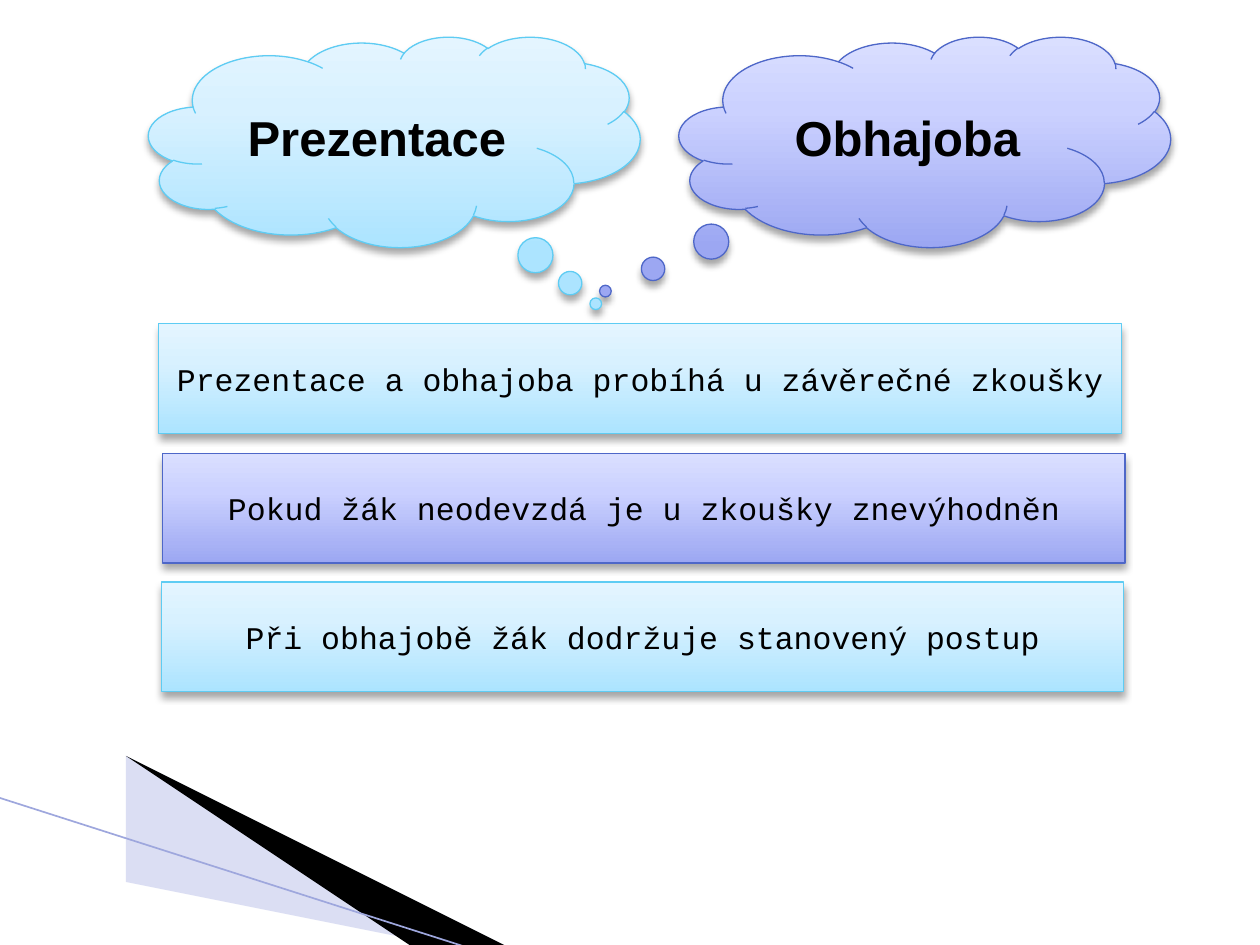
from lxml.etree import SubElement
from pptx import Presentation
from pptx.dml.color import RGBColor
from pptx.enum.shapes import MSO_CONNECTOR, MSO_SHAPE
from pptx.enum.text import MSO_ANCHOR, PP_ALIGN
from pptx.oxml import parse_xml
from pptx.oxml.ns import nsdecls, qn
from pptx.util import Inches, Pt

COLORS = {
    "black": "000000",
    "sky line": "5ECCF3",
    "violet line": "4E67C8",
    "text outline": "B4DCFA",
    "pale wedge": "A6AEE1",
    "edge": "9EA7DD",
}
GRADIENTS = {
    "sky": [(0, "ACE4FF"), (65, "D8F1FF"), (100, "E4F5FF")],
    "violet": [(0, "9CA7F2"), (65, "CBD1FF"), (100, "DADFFF")],
}


def rgb(name):
    return RGBColor.from_string(COLORS[name])


def write(shape, text, size=18, font="Courier New", bold=False, outline=None):
    frame = shape.text_frame
    frame.word_wrap = True
    frame.vertical_anchor = MSO_ANCHOR.MIDDLE
    paragraph = frame.paragraphs[0]
    paragraph.alignment = PP_ALIGN.CENTER
    run = paragraph.add_run()
    run.text = text
    run.font.size = Pt(size)
    run.font.name = font
    run.font.bold = bold
    run.font.color.rgb = rgb("black")
    if outline:
        run.font._element.insert(0, parse_xml(
            f'<a:ln {nsdecls("a")} w="{Pt(0.75)}"><a:solidFill>'
            f'<a:srgbClr val="{COLORS[outline]}"/></a:solidFill></a:ln>'))


class SlideBuilder:
    """Holds the shared style and the slide being drawn."""

    line_width = Pt(0.75)

    def __init__(self, slide):
        self.slide = slide

    def wedge(self, points, color, opacity=None):
        builder = self.slide.shapes.build_freeform(*points[0], scale=Inches(1))
        builder.add_line_segments(points[1:], close=True)
        shape = builder.convert_to_shape()
        shape.shadow.inherit = False
        shape.line.fill.background()
        shape.fill.solid()
        shape.fill.fore_color.rgb = rgb(color)
        if opacity:
            fill_color = shape._element.spPr.find(".//" + qn("a:srgbClr"))
            SubElement(fill_color, qn("a:alpha"), val=str(opacity * 1000))

    def line(self, start, end, color, width):
        ends = [Inches(value) for value in (*start, *end)]
        connector = self.slide.shapes.add_connector(MSO_CONNECTOR.STRAIGHT, *ends)
        connector.line.color.rgb = rgb(color)
        connector.line.width = Pt(width)
        SubElement(connector._element.spPr, qn("a:effectLst"))

    def glossy_shape(self, kind, box, theme):
        """Add a shape with the theme's gradient, outline and soft shadow."""
        shape = self.slide.shapes.add_shape(kind, *[Inches(value) for value in box])
        shape.fill.gradient()
        shape.fill.gradient_angle = 90
        properties = shape._element.spPr
        stops = properties.find(".//" + qn("a:gsLst"))
        stops.clear()
        for position, color in GRADIENTS[theme]:
            stop = SubElement(stops, qn("a:gs"), pos=str(position * 1000))
            SubElement(stop, qn("a:srgbClr"), val=color)
        shape.line.color.rgb = rgb(f"{theme} line")
        shape.line.width = self.line_width
        shape.shadow.inherit = False
        properties.find(qn("a:effectLst")).append(parse_xml(
            f'<a:outerShdw {nsdecls("a")} blurRad="{Pt(4)}" dist="{Pt(3)}" '
            f'dir="5400000" rotWithShape="0"><a:srgbClr val="{COLORS["black"]}">'
            '<a:alpha val="35000"/></a:srgbClr></a:outerShdw>'))
        return shape

    def bar(self, text, left, top, theme):
        shape = self.glossy_shape(MSO_SHAPE.RECTANGLE, (left, top, 7.64, 0.87), theme)
        write(shape, text)

    def cloud(self, text, left, tail, theme):
        shape = self.glossy_shape(
            MSO_SHAPE.CLOUD_CALLOUT, (left, 0.29, 3.9, 1.67), theme)
        for index, value in enumerate(tail):
            shape.adjustments[index] = value
        write(shape, text, size=28, font="Arial", bold=True, outline="text outline")


def main():
    presentation = Presentation()
    presentation.slide_width = Inches(10)
    presentation.slide_height = Inches(7.5)
    builder = SlideBuilder(presentation.slides.add_slide(presentation.slide_layouts[6]))

    builder.wedge([(0.55, 6.51), (5.95, 7.51), (4.56, 7.51), (0.55, 6.5)],
                  "pale wedge", opacity=40)
    builder.wedge([(0.53, 6.49), (4.57, 7.51), (3.72, 7.52), (0.54, 6.5)], "black")
    builder.line((-0.01, 6.33), (3.71, 7.52), "edge", 0.95)

    builder.bar("Prezentace a obhajoba probíhá u závěrečné zkoušky", 1.26, 2.57, "sky")
    builder.bar("Pokud žák neodevzdá je u zkoušky znevýhodněn", 1.29, 3.6, "violet")
    builder.bar("Při obhajobě žák dodržuje stanovený postup", 1.28, 4.62, "sky")

    builder.cloud("Obhajoba", 5.39, (-0.65, 0.71), "violet")
    builder.cloud("Prezentace", 1.18, (0.41, 0.77), "sky")

    presentation.save("out.pptx")


if __name__ == "__main__":
    main()
